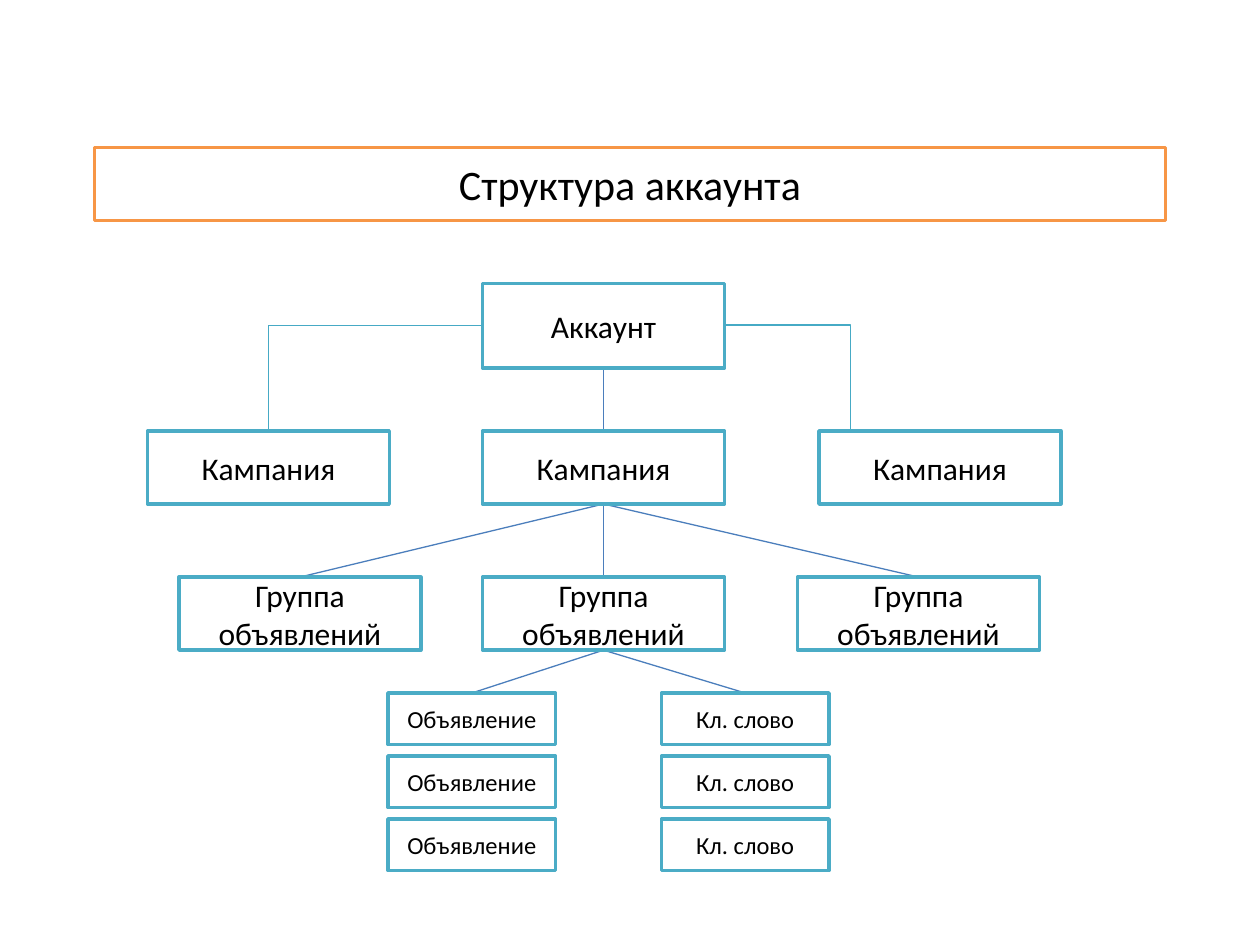
from dataclasses import dataclass

from lxml.etree import SubElement
from pptx import Presentation
from pptx.dml.color import RGBColor
from pptx.enum.shapes import MSO_CONNECTOR as Connector, MSO_SHAPE as Preset
from pptx.enum.text import MSO_ANCHOR as Anchor, MSO_AUTO_SIZE as AutoSize, PP_ALIGN as Align
from pptx.oxml.ns import qn
from pptx.util import Inches, Pt

TOP, LEFT, BOTTOM, RIGHT = range(4)
ORANGE, TEAL, ELBOW_TEAL, BLUE = "F79646", "4BACC6", "46AAC5", "4B7EBC"


@dataclass(frozen=True)
class Level:
    label: str
    lefts: tuple[float, ...]
    tops: tuple[float, ...]
    width: float
    height: float
    size: int


ACCOUNT = Level("Аккаунт", (3.83,), (2.25,), 1.92, 0.67, 18)
CAMPAIGNS = Level("Кампания", (1.17, 3.83, 6.5), (3.42,), 1.92, 0.58, 18)
GROUPS = Level("Группа объявлений", (1.42, 3.83, 6.33), (4.58,), 1.92, 0.58, 18)
ADS = Level("Объявление", (3.08,), (5.5, 6, 6.5), 1.33, 0.41, 14)
KEYWORDS = Level("Кл. слово", (5.25,), (5.5, 6, 6.5), 1.33, 0.41, 14)


def paint(target, color: str) -> None:
    target.rgb = RGBColor.from_string(color)


def outline(shape, color: str, width: float) -> None:
    shape.line.fill.solid()
    paint(shape.line.fill.fore_color, color)
    shape.line.width = Pt(width)


def write(shape, text: str, *, size: int, color: str = "000000", font: str = "Calibri") -> None:
    frame = shape.text_frame
    frame.word_wrap = True
    frame.auto_size = AutoSize.NONE
    frame.vertical_anchor = Anchor.MIDDLE
    paragraph = frame.paragraphs[0]
    paragraph.alignment = Align.CENTER
    run = paragraph.add_run()
    run.text = text
    run.font.name = font
    run.font.size = Pt(size)
    paint(run.font.color, color)


def draw_level(slide, level: Level) -> list:
    boxes = []
    for top in level.tops:
        for left in level.lefts:
            box = slide.shapes.add_shape(
                Preset.RECTANGLE, Inches(left), Inches(top), Inches(level.width), Inches(level.height)
            )
            box.shadow.inherit = False
            box.fill.solid()
            paint(box.fill.fore_color, "FFFFFF")
            outline(box, TEAL, 2)
            write(box, level.label, size=level.size)
            boxes.append(box)
    return boxes


def draw_connector(slide, kind: Connector, color: str, ends: tuple[float, ...] = (0, 0, 0, 0)):
    connector = slide.shapes.add_connector(kind, *map(Inches, ends))
    outline(connector, color, 0.75)
    properties = connector._element.spPr
    SubElement(properties, qn("a:effectLst"))
    if kind == Connector.ELBOW:
        properties.find(qn("a:prstGeom")).set("prst", "bentConnector2")
    slide.shapes._spTree.insert(2, connector._element)
    return connector


def link_down(slide, parent, children: list) -> None:
    for child in children:
        connector = draw_connector(slide, Connector.STRAIGHT, BLUE)
        connector.begin_connect(parent, BOTTOM)
        connector.end_connect(child, TOP)


def main() -> None:
    deck = Presentation()
    deck.slide_width, deck.slide_height = Inches(10), Inches(7.5)
    slide = deck.slides.add_slide(deck.slide_layouts[0])
    subtitle = slide.placeholders[1]._element
    subtitle.getparent().remove(subtitle)

    title = slide.shapes.title
    title.left, title.top, title.width, title.height = map(Inches, (0.75, 1.17, 8.5, 0.58))
    outline(title, ORANGE, 2)
    write(title, "Структура аккаунта", size=24)

    account, = draw_level(slide, ACCOUNT)
    campaigns = draw_level(slide, CAMPAIGNS)
    groups = draw_level(slide, GROUPS)
    ads = draw_level(slide, ADS)
    keywords = draw_level(slide, KEYWORDS)

    left_branch = draw_connector(slide, Connector.ELBOW, ELBOW_TEAL, (3.83, 2.58, 2.12, 3.42))
    left_branch.begin_connect(account, LEFT)
    left_branch.end_connect(campaigns[0], TOP)
    draw_connector(slide, Connector.ELBOW, ELBOW_TEAL, (5.75, 2.58, 6.75, 3.67))

    link_down(slide, account, [campaigns[1]])
    link_down(slide, campaigns[1], groups)
    link_down(slide, groups[1], [ads[0], keywords[0]])

    deck.save("out.pptx")


if __name__ == "__main__":
    main()
